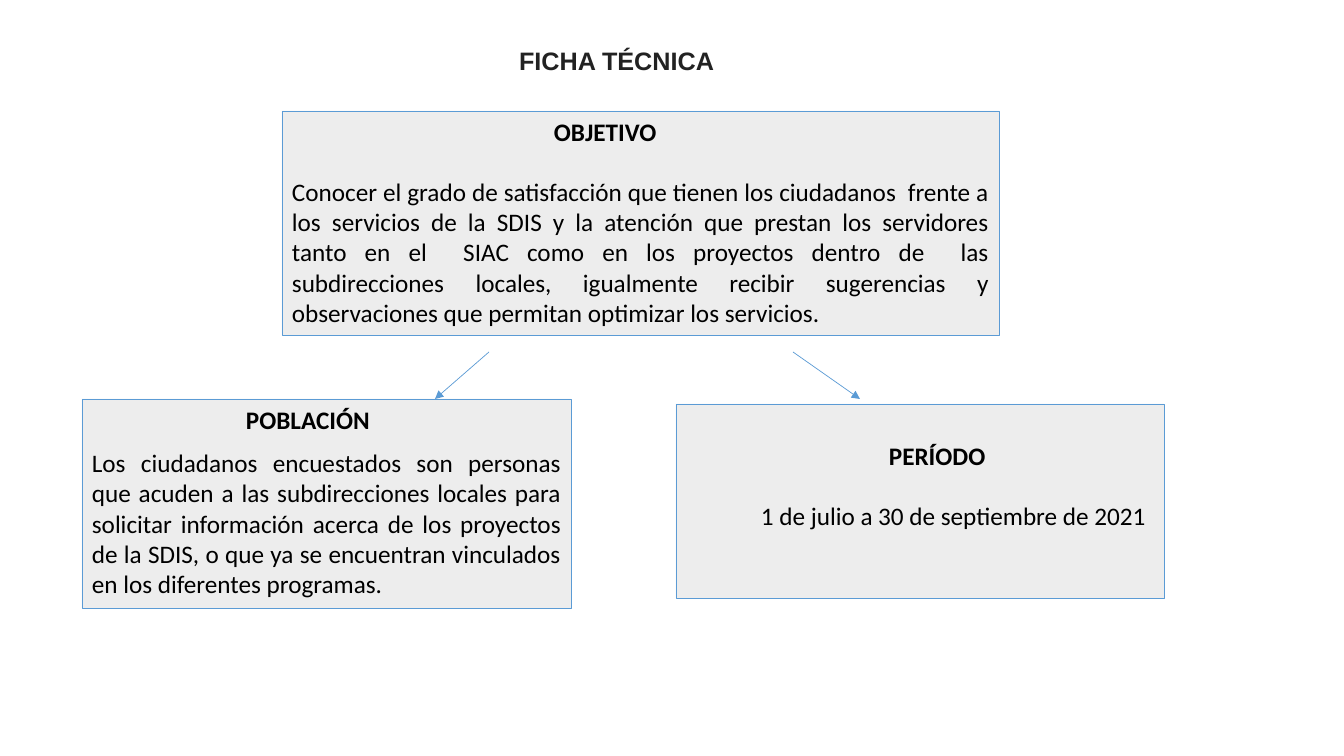
from dataclasses import dataclass

from lxml.etree import SubElement
from pptx import Presentation
from pptx.dml.color import RGBColor
from pptx.enum.shapes import MSO_CONNECTOR, MSO_SHAPE
from pptx.enum.text import MSO_ANCHOR, MSO_AUTO_SIZE, PP_ALIGN
from pptx.oxml.ns import qn
from pptx.slide import Slide
from pptx.text.text import TextFrame
from pptx.util import Emu, Pt

BLACK = RGBColor(0x00, 0x00, 0x00)
TITLE_GREY = RGBColor(0x22, 0x22, 0x22)
BOX_GREY = RGBColor(0xED, 0xED, 0xED)
BLUE = RGBColor(0x5B, 0x9B, 0xD5)

TITLE_ONLY = 5
TEXT_SIZE = 18
LINE_WIDTH = 0.5


@dataclass
class Box:
    left: int
    top: int
    width: int
    height: int
    heading: str
    heading_indent: int
    body: str
    gap: float  # points between heading and body
    body_indent: int = 0
    alignment: PP_ALIGN = PP_ALIGN.JUSTIFY
    top_margin: int = 5


@dataclass
class Arrow:
    start: tuple[int, int]
    end: tuple[int, int]


BOXES = [
    Box(282, 111, 717, 224, "OBJETIVO", 262,
        "Conocer el grado de satisfacción que tienen los ciudadanos  frente a "
        "los servicios de la SDIS y la atención que prestan los servidores "
        "tanto en el  SIAC como en los proyectos dentro de  las "
        "subdirecciones locales, igualmente recibir sugerencias y "
        "observaciones que permitan optimizar los servicios.", gap=21.5),
    Box(82, 399, 489, 209, "POBLACIÓN", 154,
        "Los ciudadanos encuestados son personas que acuden a las "
        "subdirecciones locales para solicitar información acerca de los "
        "proyectos de la SDIS, o que ya se encuentran vinculados en los "
        "diferentes programas.", gap=9.5),
    Box(676, 404, 488, 194, "PERÍODO", 203,
        "1 de julio a 30 de septiembre de 2021", gap=21.5, body_indent=75,
        alignment=PP_ALIGN.LEFT, top_margin=36),
]

ARROWS = [
    Arrow((489, 352), (435, 399)),
    Arrow((793, 352), (860, 399)),
]


def px(length: int) -> Emu:
    return Emu(round(length * 914400 / 100.8))


def write(frame: TextFrame, text: str, *, first: bool = True,
          font: str = "Calibri", color: RGBColor = BLACK, bold: bool = False,
          alignment: PP_ALIGN = PP_ALIGN.LEFT, indent: int = 0,
          space_before: float = 0) -> None:
    paragraph = frame.paragraphs[0] if first else frame.add_paragraph()
    paragraph.alignment = alignment
    paragraph.space_before = Pt(space_before)
    paragraph.line_spacing = 1.0
    if indent:
        properties = paragraph._p.get_or_add_pPr()
        properties.set("marL", str(px(indent)))
        properties.set("indent", "0")
    run = paragraph.add_run()
    run.text = text
    run.font.name = font
    run.font.size = Pt(TEXT_SIZE)
    run.font.bold = bold
    run.font.color.rgb = color


def add_title(slide: Slide, text: str) -> None:
    title = slide.shapes.title
    title.left, title.top, title.width, title.height = map(px, (509, 40, 440, 40))
    frame = title.text_frame
    frame.auto_size = MSO_AUTO_SIZE.NONE
    frame.vertical_anchor = MSO_ANCHOR.MIDDLE
    write(frame, text, font="Arial", color=TITLE_GREY, bold=True)


def add_box(slide: Slide, box: Box) -> None:
    shape = slide.shapes.add_shape(
        MSO_SHAPE.RECTANGLE, px(box.left), px(box.top), px(box.width), px(box.height))
    shape.shadow.inherit = False
    shape.fill.solid()
    shape.fill.fore_color.rgb = BOX_GREY
    shape.line.color.rgb = BLUE
    shape.line.width = Pt(LINE_WIDTH)
    frame = shape.text_frame
    frame.word_wrap = True
    frame.vertical_anchor = MSO_ANCHOR.TOP
    frame.margin_top = px(box.top_margin)
    write(frame, box.heading, bold=True, indent=box.heading_indent)
    write(frame, box.body, first=False, alignment=box.alignment,
          indent=box.body_indent, space_before=box.gap)


def add_arrow(slide: Slide, arrow: Arrow) -> None:
    connector = slide.shapes.add_connector(
        MSO_CONNECTOR.STRAIGHT, *map(px, arrow.start + arrow.end))
    connector.line.color.rgb = BLUE
    connector.line.width = Pt(LINE_WIDTH)
    SubElement(connector.line._get_or_add_ln(), qn("a:tailEnd"), type="triangle")
    SubElement(connector._element.spPr, qn("a:effectLst"))


def main() -> None:
    presentation = Presentation()
    presentation.slide_width = px(1344)
    presentation.slide_height = px(756)
    slide = presentation.slides.add_slide(presentation.slide_layouts[TITLE_ONLY])

    # Title
    add_title(slide, "FICHA TÉCNICA")

    # Objective, population and period
    for box in BOXES:
        add_box(slide, box)

    # Arrows from the objective to the lower boxes
    for arrow in ARROWS:
        add_arrow(slide, arrow)

    presentation.save("out.pptx")


if __name__ == "__main__":
    main()
